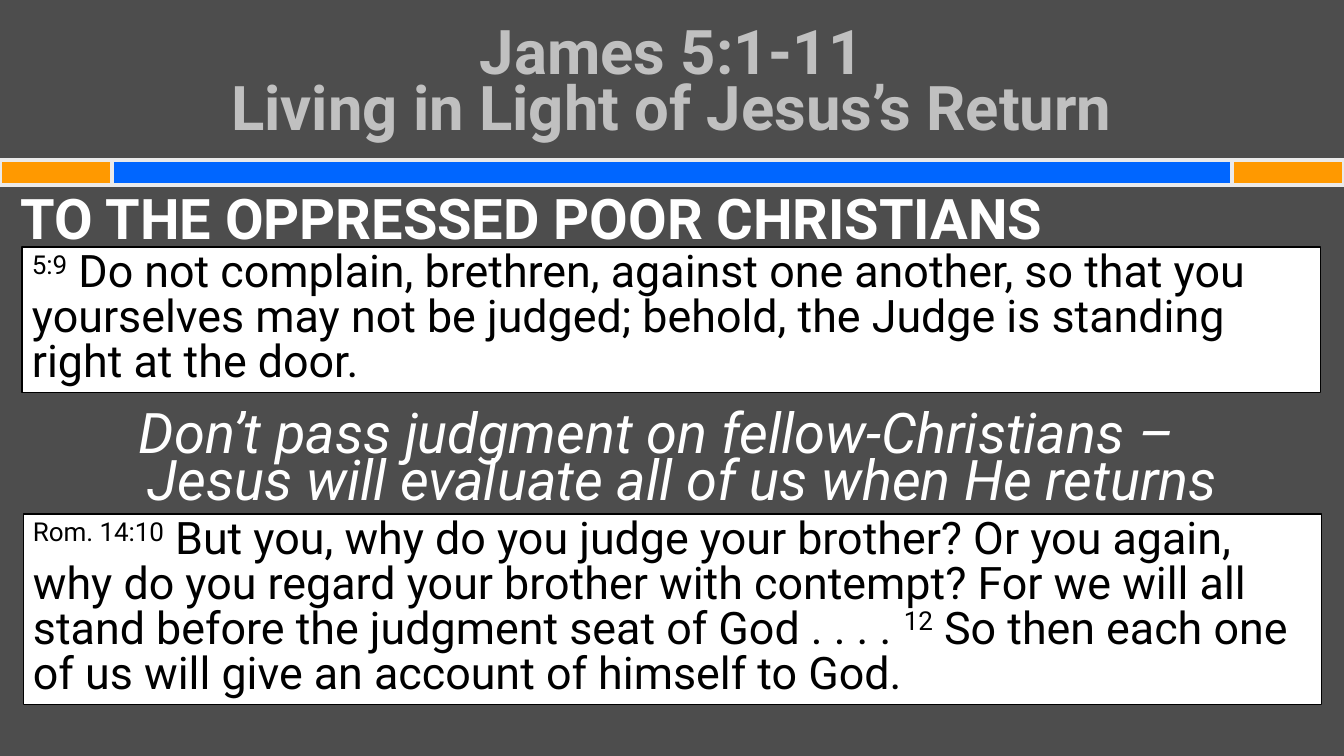
from pptx import Presentation
from pptx.dml.color import RGBColor
from pptx.enum.shapes import MSO_SHAPE as Shape
from pptx.enum.text import MSO_ANCHOR as Anchor, MSO_AUTO_SIZE as AutoSize, PP_ALIGN as Align
from pptx.util import Pt

PX = 914400 / 100.8
FONT = "Roboto"


def px(*lengths):
    return [round(length * PX) for length in lengths]


def color(hex_string):
    return RGBColor.from_string(hex_string)


presentation = Presentation()
presentation.slide_width, presentation.slide_height = px(1344, 756)
slide = presentation.slides.add_slide(presentation.slide_layouts[5])
slide.background.fill.solid()
slide.background.fill.fore_color.rgb = color("4D4D4D")

# Divider: a blue band with orange ends
for left, width, fill in [(0, 1344, "0066FF"), (0, 112, "FF9900"), (1232, 112, "FF9900")]:
    band = slide.shapes.add_shape(Shape.RECTANGLE, *px(left, 160, width, 25))
    band.shadow.inherit = False
    band.fill.solid()
    band.fill.fore_color.rgb = color(fill)
    band.line.color.rgb = color("EAEAEA")
    band.line.width = Pt(3)

# Title
title = slide.shapes.title
title.left, title.top, title.width, title.height = px(67, 30, 1210, 113)
title.text_frame.auto_size = AutoSize.NONE
title.text_frame.vertical_anchor = Anchor.MIDDLE
heading = title.text_frame.paragraphs[0]
heading.add_run().text = "James 5:1-11"
heading.add_line_break()
heading.add_run().text = "Living in Light of Jesus’s Return"
heading.alignment = Align.CENTER
heading.line_spacing = Pt(40)
heading.font.name = FONT
heading.font.size = Pt(44)
heading.font.bold = True
heading.font.color.rgb = color("C0C0C0")

# Section heading and, below the first verse, the lesson drawn from it
body = slide.shapes.add_textbox(*px(11, 197, 1305, 539)).text_frame
body.word_wrap = True
section = body.paragraphs[0]
section.add_run().text = "TO THE OPPRESSED POOR CHRISTIANS"
section.font.bold = True
lesson = body.add_paragraph()
lesson.add_run().text = "Don’t pass judgment on fellow-Christians – "
lesson.add_line_break()
lesson.add_run().text = "Jesus will evaluate all of us when He returns"
lesson.alignment = Align.CENTER
lesson.space_before = Pt(119)
lesson.font.italic = True
indent = px(38)[0]
for paragraph in (section, lesson):
    paragraph.line_spacing = 0.7
    paragraph.font.name = FONT
    paragraph.font.size = Pt(40)
    paragraph.font.color.rgb = color("FFFFFF")
    properties = paragraph._p.get_or_add_pPr()
    properties.set("marL", str(indent))
    properties.set("indent", str(-indent))

# Verses: references (raised) alternate with their wording
verses = [
    (22, 247, 146, [
        "5:9",
        " Do not complain, brethren, against one another, so that you yourselves "
        "may not be judged; behold, the Judge is standing right at the door.",
    ]),
    (23, 514, 191, [
        "Rom. 14:10",
        " But you, why do you judge your brother? Or you again, why do you regard your "
        "brother with contempt? For we will all stand before the judgment seat of God . . . . ",
        "12",
        " So then each one of us will give an account of himself to God.",
    ]),
]
for left, top, height, parts in verses:
    box = slide.shapes.add_shape(Shape.RECTANGLE, *px(left, top, 1299, height))
    box.shadow.inherit = False
    box.fill.solid()
    box.fill.fore_color.rgb = color("FFFFFF")
    box.line.color.rgb = color("000000")
    box.line.width = Pt(0.75)
    box.text_frame.word_wrap = True
    box.text_frame.vertical_anchor = Anchor.TOP
    verse = box.text_frame.paragraphs[0]
    verse.alignment = Align.LEFT
    verse.line_spacing = Pt(32)
    verse.font.name = FONT
    verse.font.size = Pt(32)
    verse.font.color.rgb = color("000000")
    for index, part in enumerate(parts):
        run = verse.add_run()
        run.text = part
        if index % 2 == 0:
            run._r.get_or_add_rPr().set("baseline", "30000")

presentation.save("out.pptx")
